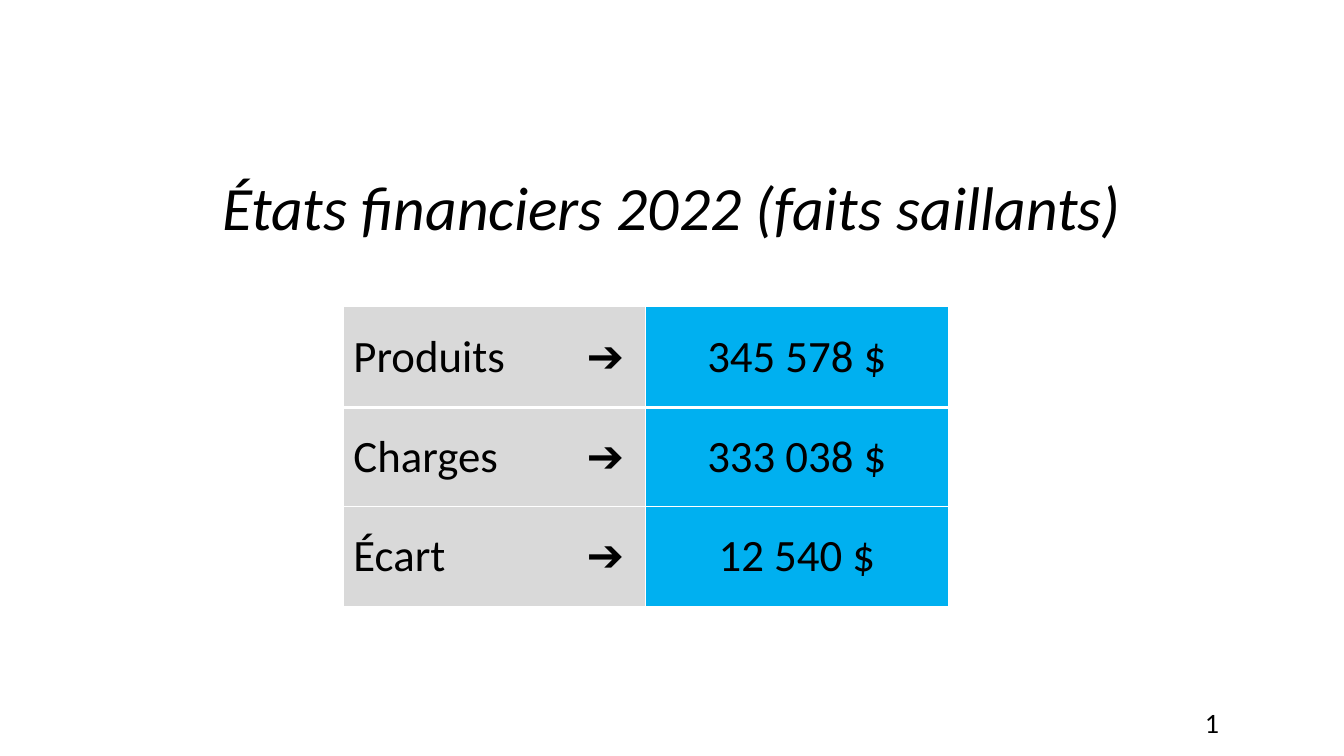
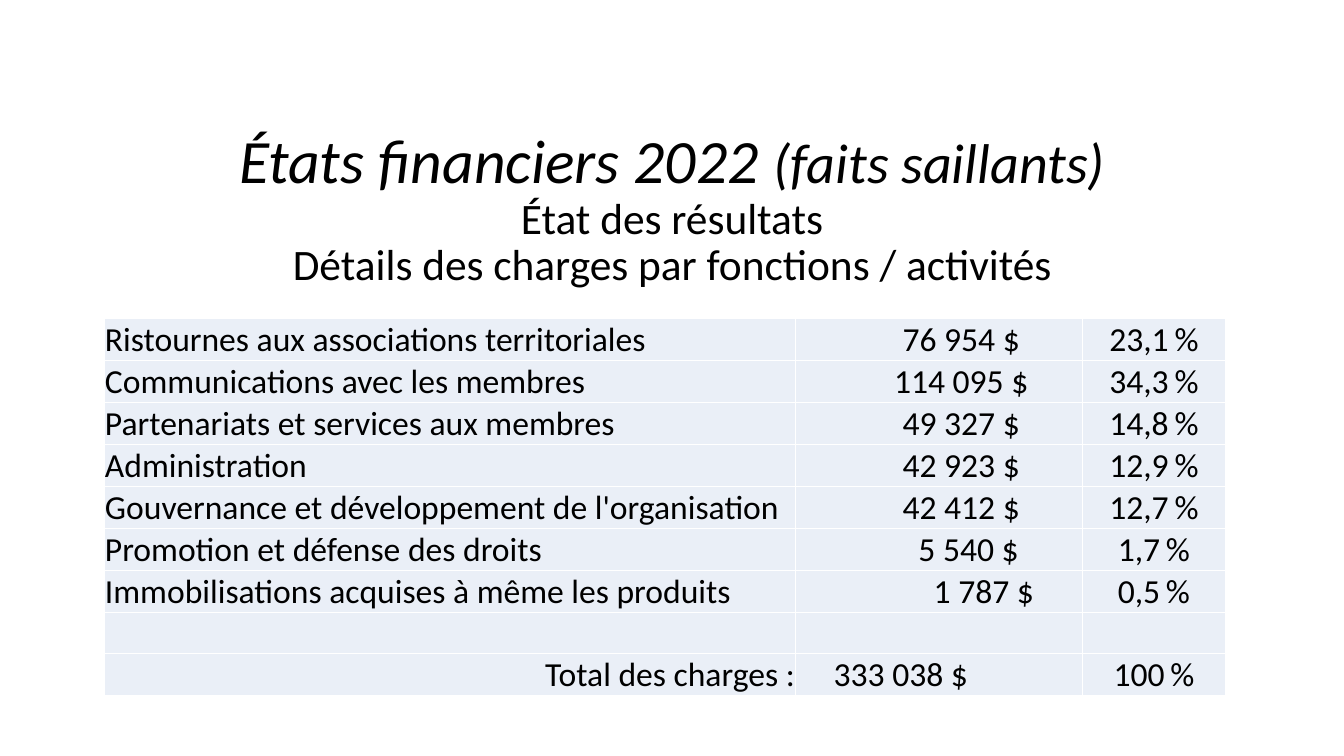
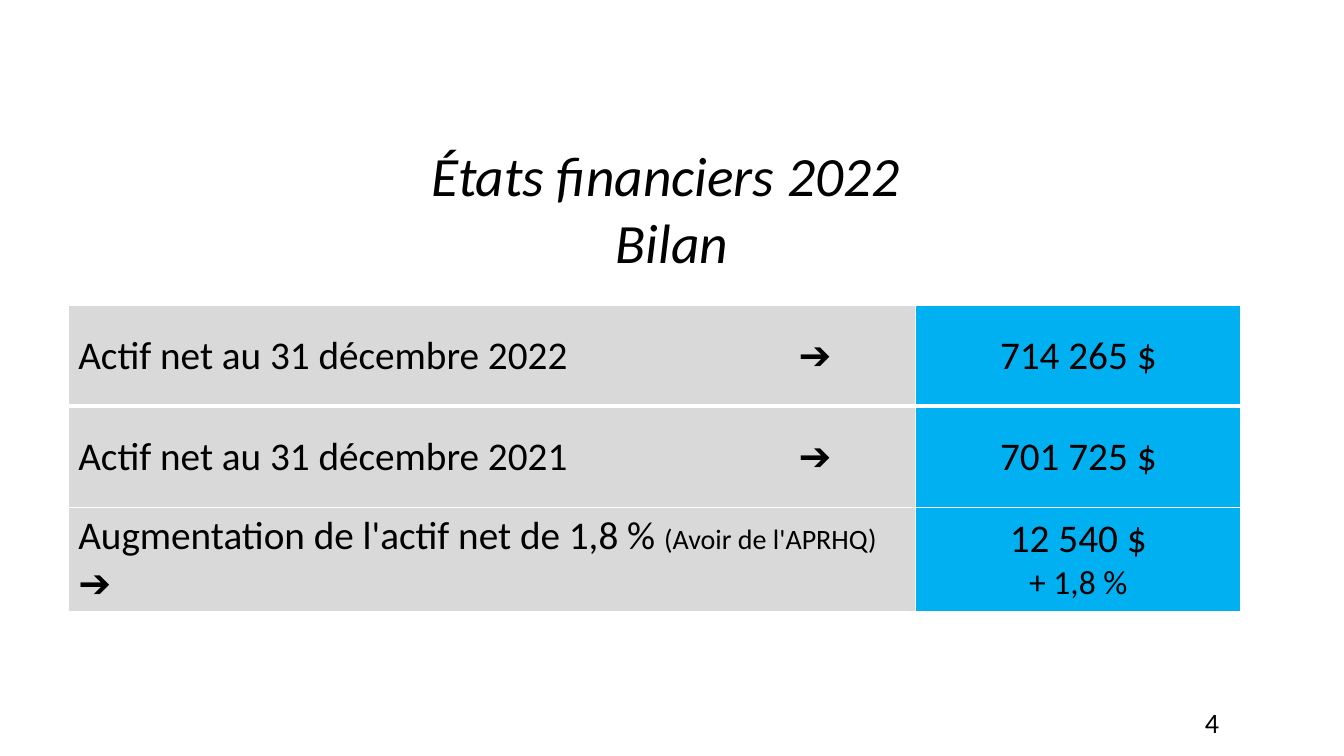
"""Build three slides of highlights from the 2022 financial statements."""
from dataclasses import dataclass

from lxml import etree
from pptx import Presentation
from pptx import util as u
from pptx.dml.color import RGBColor
from pptx.enum import text
from pptx.oxml.ns import qn

PX = 9525
LEFT, CENTER, RIGHT = text.PP_ALIGN.LEFT, text.PP_ALIGN.CENTER, text.PP_ALIGN.RIGHT
TOP, MIDDLE, BOTTOM = text.MSO_ANCHOR.TOP, text.MSO_ANCHOR.MIDDLE, text.MSO_ANCHOR.BOTTOM


@dataclass(frozen=True)
class Theme:
    font: str = "Calibri"
    ink: str = "000000"
    line: str = "FFFFFF"
    label: str = "D9D9D9"
    amount: str = "00B0F0"
    detail: str = "EAEFF7"
    title: float = 44
    title_note: float = 40
    title_sheet: float = 39.6
    subtitle: float = 31
    figure: float = 32
    balance: float = 28
    body: float = 24
    small: float = 20
    gap: float = 18


T = Theme()


def write(tf, paras, size=T.body, align=LEFT, italic=False, spacing=None, tab=None):
    """Write paragraphs, each a string or a list of strings and (string, format) runs."""
    tf.word_wrap = True
    for i, runs in enumerate(paras):
        p = tf.paragraphs[0] if i == 0 else tf.add_paragraph()
        p.alignment = align
        p.space_before = u.Pt(0)
        if spacing:
            p.line_spacing = spacing
        if tab:
            tabs = etree.SubElement(p._p.get_or_add_pPr(), qn("a:tabLst"))
            etree.SubElement(tabs, qn("a:tab"), pos=str(tab * PX), algn="l")
        for run in [runs] if isinstance(runs, str) else runs:
            words, fmt = (run, {}) if isinstance(run, str) else run
            r = p.add_run()
            r.text = words
            r.font.name = T.font
            r.font.size = u.Pt(fmt.get("size", size))
            r.font.bold = fmt.get("bold", False)
            r.font.italic = fmt.get("italic", italic)
            r.font.color.rgb = RGBColor.from_string(T.ink)


def make_table(s, left, top, widths, heights, fills, thick_rule):
    """Add a filled table with white rules, thick below the first row if asked."""
    frame = s.shapes.add_table(len(heights), len(widths), left * PX, top * PX,
                               sum(widths) * PX, sum(heights) * PX)
    table = frame.table
    table.first_row = table.horz_banding = False
    for column, width in zip(table.columns, widths):
        column.width = width * PX
    for i, (row, height) in enumerate(zip(table.rows, heights)):
        row.height = height * PX
        for cell, color in zip(row.cells, fills):
            cell.fill.solid()
            cell.fill.fore_color.rgb = RGBColor.from_string(color)
            tc_pr = cell._tc.get_or_add_tcPr()
            for n, side in enumerate("LRTB"):
                thick = thick_rule and (i, side) in ((0, "B"), (1, "T"))
                ln = etree.Element(qn(f"a:ln{side}"), w=str(u.Pt(3 if thick else 1)))
                solid = etree.SubElement(ln, qn("a:solidFill"))
                etree.SubElement(solid, qn("a:srgbClr"), val=T.line)
                tc_pr.insert(n, ln)
    return table


prs = Presentation()
prs.slide_width, prs.slide_height = 1280 * PX, 720 * PX

titles = [
    dict(top=152, height=88, anchor=MIDDLE, number="1", size=T.title, spacing=None,
         paras=["États financiers 2022 (faits saillants)"]),
    dict(top=119, height=185, anchor=TOP, number=None, size=T.subtitle, spacing=0.9,
         paras=[[("États financiers 2022 ", dict(size=T.title, italic=True)),
                 ("(faits saillants)", dict(size=T.title_note, italic=True))],
                "État des résultats",
                "Détails des charges par fonctions / activités"]),
    dict(top=130, height=139, anchor=TOP, number="4", size=T.title_sheet, spacing=None,
         paras=["États financiers 2022 ", "Bilan"]),
]
for title in titles:
    s = prs.slides.add_slide(prs.slide_layouts[5])
    sp = s.shapes.title
    sp.left, sp.top = 0, title["top"] * PX
    sp.width, sp.height = prs.slide_width, title["height"] * PX
    tf = sp.text_frame
    tf.auto_size = text.MSO_AUTO_SIZE.NONE
    tf.vertical_anchor = title["anchor"]
    write(tf, title["paras"], size=title["size"], align=CENTER,
          italic=title["number"] is not None, spacing=title["spacing"])
    if title["number"]:
        box = s.shapes.add_textbox(1138 * PX, 667 * PX, 142 * PX, 38 * PX)
        write(box.text_frame, [title["number"]], size=T.small)

results, charges, balance = prs.slides

arrow = ("➔", dict(bold=True))
summaries = [
    dict(slide=results, left=327, top=292, widths=[288, 288], heights=[96, 94, 96],
         size=T.figure, tab=222,
         rows=[([["Produits\t", arrow]], ["345 578 $"]),
               (["Charges\t➔"], ["333 038 $"]),
               (["Écart\t➔"], ["12 540 $"])]),
    dict(slide=balance, left=65, top=291, widths=[807, 310], heights=[96, 96, 96],
         size=T.balance, tab=686,
         rows=[([["Actif net au 31 décembre 2022\t", arrow]], ["714 265 $"]),
               (["Actif net au 31 décembre 2021\t➔"], ["701 725 $"]),
               ([["Augmentation de l'actif net de 1,8 % ",
                  ("(Avoir de l'APRHQ)", dict(size=T.small)), " ➔"]],
                ["12 540 $", [("+ 1,8 %", dict(size=T.body))]])]),
]
for summary in summaries:
    table = make_table(summary["slide"], summary["left"], summary["top"], summary["widths"],
                       summary["heights"], [T.label, T.amount], thick_rule=True)
    for row, (label, amount) in zip(table.rows, summary["rows"]):
        for cell in row.cells:
            cell.vertical_anchor = MIDDLE
        write(row.cells[0].text_frame, label, size=summary["size"], tab=summary["tab"])
        write(row.cells[1].text_frame, amount, size=summary["size"], align=CENTER)

details = [
    ("Ristournes aux associations territoriales", "76 954 $", "23,1", 43),
    ("Communications avec les membres", "114 095 $", "34,3", 43),
    ("Partenariats et services aux membres", "49 327 $", "14,8", 43),
    ("Administration", "42 923 $", "12,9", 43),
    ("Gouvernance et développement de l'organisation", "42 412 $", "12,7", 43),
    ("Promotion et défense des droits", "5 540 $", "1,7", 57),
    ("Immobilisations acquises à même les produits", "1 787 $", "0,5", 86),
    None,
    ("Total des charges :", "333 038 $", "100", 36),
]
table = make_table(charges, 99, 303, [659, 273, 136], [39] * len(details),
                   [T.detail] * 3, thick_rule=False)
for row, detail in zip(table.rows, details):
    for cell in row.cells:
        cell.vertical_anchor = BOTTOM
        cell.margin_left = cell.margin_right = cell.margin_top = PX
        cell.margin_bottom = 0
    if detail is None:
        continue
    label, amount, share, indent = detail
    is_total = detail is details[-1]
    label_cell, amount_cell, share_cell = row.cells
    amount_cell.margin_left = indent * PX
    write(label_cell.text_frame, [label], align=RIGHT if is_total else LEFT)
    write(amount_cell.text_frame, [amount], align=LEFT if is_total else CENTER)
    write(share_cell.text_frame, [[share, (" ", dict(size=T.gap, bold=True)), "%"]], align=CENTER)

prs.save("out.pptx")
